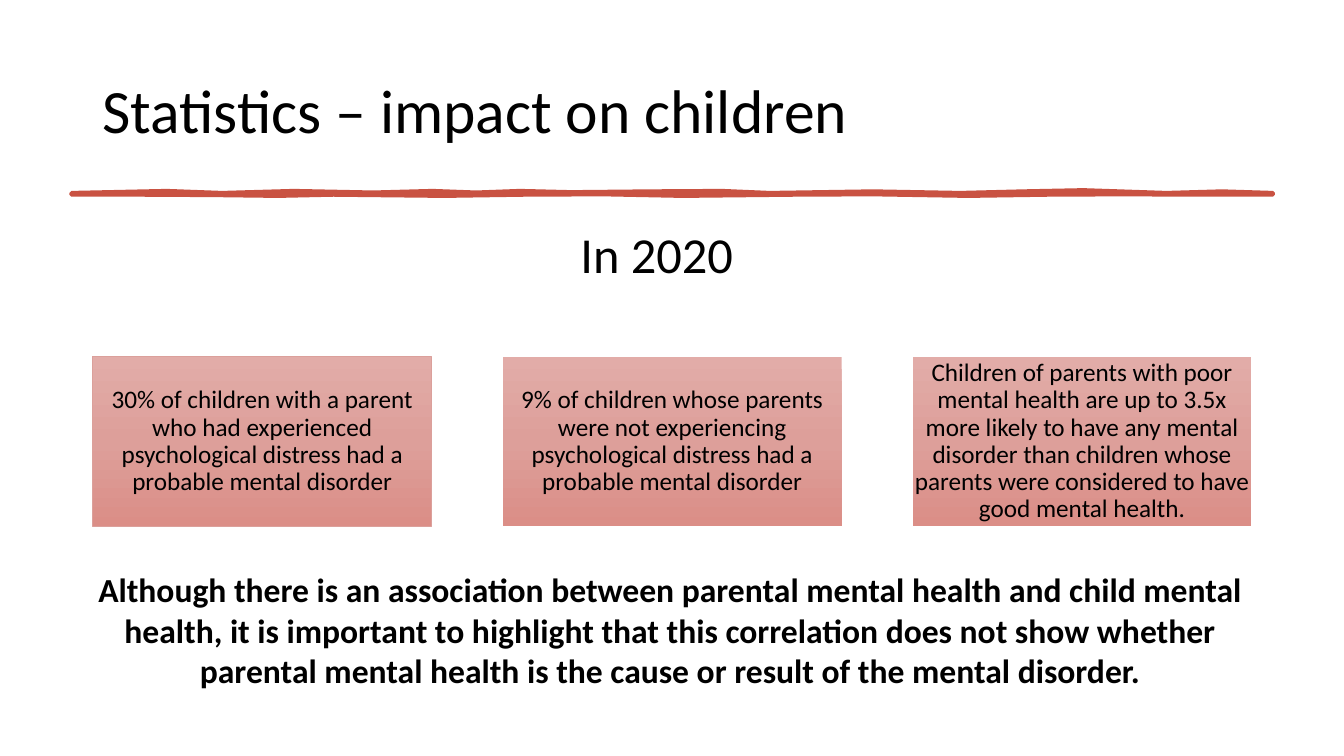
from copy import deepcopy
from pptx import Presentation
from pptx.dml.color import RGBColor
from pptx.enum.shapes import MSO_SHAPE as Shape
from pptx.enum.text import MSO_ANCHOR as Anchor, MSO_AUTO_SIZE as Auto, PP_ALIGN as Align
from pptx.util import Cm, Pt

# Content
TITLE = "Statistics – impact on children"
YEAR = "In 2020"
FACTS = [
    "30% of children with a parent who had experienced psychological distress "
    "had a probable mental disorder",
    "9% of children whose parents were not experiencing psychological distress "
    "had a probable mental disorder",
    "Children of parents with poor mental health are up to 3.5x more likely to "
    "have any mental disorder than children whose parents were considered to "
    "have good mental health.",
]
NOTE = ("Although there is an association between parental mental health and child "
        "mental health, it is important to highlight that this correlation does not "
        "show whether parental mental health is the cause or result of the mental "
        "disorder.")

# Look
FONT, INK, RED, EDGE = "Calibri", "000000", "C95242", "DBA09B"
SHADES = [(0, "E2ACA8"), (0.5, "DD9F9A"), (1, "DB8E87")]
CARD_X, CARD_Y, CARD_W, CARD_H, STEP = 2.34, 8.99, 8.54, 4.27, 10.33

# Edges of the brush stroke: x and y in cm
UPPER = [(1.8, 4.86), (4.2, 4.81), (5.6, 4.86), (7.4, 4.81), (9.4, 4.85),
         (10.9, 4.81), (12, 4.85), (13.1, 4.81), (14.4, 4.84), (16.4, 4.82),
         (18.2, 4.81), (19.4, 4.86), (22, 4.82), (24.2, 4.86), (25.8, 4.82),
         (27.3, 4.79), (29.4, 4.86), (30.8, 4.82), (32.08, 4.86)]
LOWER = [(32.08, 4.91), (30, 4.91), (28.4, 4.9), (26.4, 4.91), (24.4, 4.94),
         (22, 4.9), (20, 4.91), (17.2, 4.94), (15.2, 4.9), (13.2, 4.91),
         (11.2, 4.94), (8.4, 4.91), (7, 4.94), (5.4, 4.92), (3.6, 4.91), (1.8, 4.91)]


def tint(code):
    return RGBColor.from_string(code)


def write(shape, text, size, bold=False, align=Align.LEFT, space=1.0,
          anchor=Anchor.TOP, wrap=True, inset=None):
    frame = shape.text_frame
    frame.auto_size = Auto.NONE
    frame.word_wrap = wrap
    frame.vertical_anchor = anchor
    if inset is not None:
        frame.margin_left = frame.margin_right = Cm(inset)
        frame.margin_top = frame.margin_bottom = Cm(inset)
    para = frame.paragraphs[0]
    para.alignment, para.line_spacing = align, space
    run = para.add_run()
    run.text = text
    font = run.font
    font.name, font.size, font.bold = FONT, Pt(size), bold
    font.color.rgb = tint(INK)


def shade(shape):
    fill = shape.fill
    fill.gradient()
    fill.gradient_angle = 270
    first = shape._element.spPr.xpath(".//a:gs")[0]
    first.addnext(deepcopy(first))
    for stop, (place, code) in zip(fill.gradient_stops, SHADES):
        stop.position = place
        stop.color.rgb = tint(code)


def place(left, top, width, height):
    return Cm(left), Cm(top), Cm(width), Cm(height)


deck = Presentation()
deck.slide_width, deck.slide_height = Cm(33.87), Cm(19.05)
slide = deck.slides.add_slide(deck.slide_layouts[5])
shapes = slide.shapes

# Title
title = shapes.title
title.left, title.top, title.width, title.height = place(2.33, 1.01, 29.21, 3.68)
write(title, TITLE, 44, space=0.9, anchor=Anchor.MIDDLE)

# Brush stroke under the title
pen = shapes.build_freeform(*[Cm(v) for v in UPPER[0]])
pen.add_line_segments([(Cm(x), Cm(y)) for x, y in UPPER[1:] + LOWER], close=True)
stroke = pen.convert_to_shape()
stroke.shadow.inherit = False
stroke.fill.solid()
stroke.fill.fore_color.rgb = stroke.line.color.rgb = tint(RED)
stroke.line.width = Pt(2.75)

# Year
year = shapes.add_textbox(*place(14.38, 5.49, 4.39, 1.8))
write(year, YEAR, 36, wrap=False)

# Fact cards
for i, fact in enumerate(FACTS):
    card = shapes.add_shape(
        Shape.RECTANGLE, *place(CARD_X + i * STEP, CARD_Y, CARD_W, CARD_H))
    card.shadow.inherit = False
    shade(card)
    if i == 0:
        card.line.color.rgb = tint(EDGE)
        card.line.width = Pt(0.75)
    else:
        card.line.fill.background()
    write(card, fact, 18, align=Align.CENTER, space=0.9, anchor=Anchor.MIDDLE, inset=0.03)

# Closing note
note = shapes.add_textbox(*place(1.88, 14.22, 30.02, 3.43))
write(note, NOTE, 24, bold=True, align=Align.CENTER)

deck.save("out.pptx")
